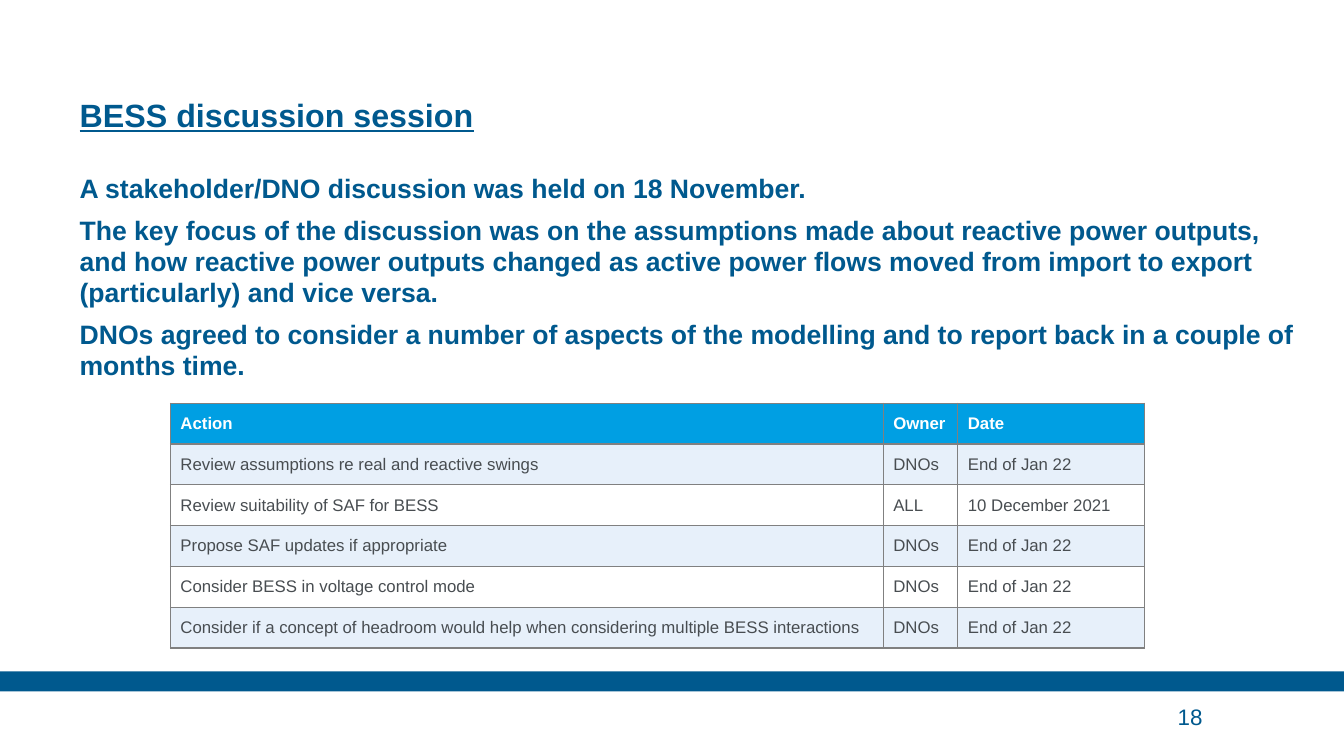
from lxml.etree import SubElement
from pptx import Presentation
from pptx.dml.color import RGBColor
from pptx.enum.shapes import MSO_SHAPE
from pptx.enum.text import MSO_ANCHOR
from pptx.oxml.ns import qn
from pptx.util import Inches, Pt

NAVY, SKY, PALE, WHITE = "00598E", "009FE3", "E7F0FA", "FFFFFF"
INK, GREY = "484D51", "808080"

ACTIONS = [
    ("Action", "Owner", "Date"),
    ("Review assumptions re real and reactive swings", "DNOs", "End of Jan 22"),
    ("Review suitability of SAF for BESS", "ALL", "10 December 2021"),
    ("Propose SAF updates if appropriate", "DNOs", "End of Jan 22"),
    ("Consider BESS in voltage control mode", "DNOs", "End of Jan 22"),
    ("Consider if a concept of headroom would help when considering multiple BESS interactions",
     "DNOs", "End of Jan 22"),
]
NOTES = [
    "A stakeholder/DNO discussion was held on 18 November.",
    "The key focus of the discussion was on the assumptions made about reactive power outputs, "
    "and how reactive power outputs changed as active power flows moved from import to export "
    "(particularly) and vice versa.",
    "DNOs agreed to consider a number of aspects of the modelling and to report back "
    "in a couple of months time.",
]


def color(code):
    return RGBColor.from_string(code)


def paint(fill, code):
    fill.solid()
    fill.fore_color.rgb = color(code)


class Page:
    face = "Arial"

    def __init__(self, slide):
        self.slide = slide

    def style(self, para, code, **form):
        for key, value in {"name": self.face, **form}.items():
            setattr(para.font, key, value)
        para.font.color.rgb = color(code)

    def bar(self, box, code):
        shape = self.slide.shapes.add_shape(MSO_SHAPE.RECTANGLE, *map(Inches, box))
        shape.shadow.inherit = False
        paint(shape.fill, code)
        shape.line.fill.background()

    def text(self, box, lines, anchor=MSO_ANCHOR.TOP, pitch=None, gap=0, **form):
        frame = self.slide.shapes.add_textbox(*map(Inches, box)).text_frame
        setup = {"word_wrap": True, "vertical_anchor": anchor, "margin_left": 0,
                 "margin_right": 0, "margin_top": 0, "margin_bottom": 0}
        for key, value in setup.items():
            setattr(frame, key, value)
        frame.text = "\n".join(lines)
        for rank, para in enumerate(frame.paragraphs):
            if pitch:
                para.line_spacing = Pt(pitch)
            if rank:
                para.space_before = Pt(gap)
            self.style(para, NAVY, **form)

    def border(self, cell):
        props = cell._tc.get_or_add_tcPr()
        for side in ("lnL", "lnR", "lnT", "lnB"):
            line = SubElement(props, qn("a:" + side), w=str(Pt(1)))
            fill = SubElement(line, qn("a:solidFill"))
            SubElement(fill, qn("a:srgbClr"), val=GREY)

    def table(self, box, widths, rows):
        grid = self.slide.shapes.add_table(len(rows), len(widths), *map(Inches, box)).table
        for col, width in zip(grid.columns, widths):
            col.width = Inches(width)
        for r, row in enumerate(rows):
            head = r == 0
            for c, words in enumerate(row):
                cell = grid.cell(r, c)
                cell.text = words
                cell.vertical_anchor = MSO_ANCHOR.MIDDLE
                self.border(cell)
                paint(cell.fill, SKY if head else PALE if r % 2 else WHITE)
                self.style(cell.text_frame.paragraphs[0], WHITE if head else INK,
                           size=Pt(12), bold=head)


def main():
    deck = Presentation()
    deck.slide_width, deck.slide_height = Inches(13.33), Inches(7.5)
    page = Page(deck.slides.add_slide(deck.slide_layouts[6]))
    page.bar((0, 6.66, 13.33, 0.2), NAVY)
    page.text((0.79, 0.31, 9.84, 1.02), ["BESS discussion session"], MSO_ANCHOR.BOTTOM,
              pitch=30, size=Pt(23), bold=True, underline=True)
    page.text((0.79, 1.72, 12.12, 4.33), NOTES, pitch=22, gap=8, size=Pt(19), bold=True)
    page.text((11.68, 6.91, 1.23, 0.39), ["18"], MSO_ANCHOR.MIDDLE, size=Pt(16))
    page.table((1.69, 4, 9.66, 2.43), (7.07, 0.74, 1.85), ACTIONS)
    deck.save("out.pptx")


if __name__ == "__main__":
    main()
